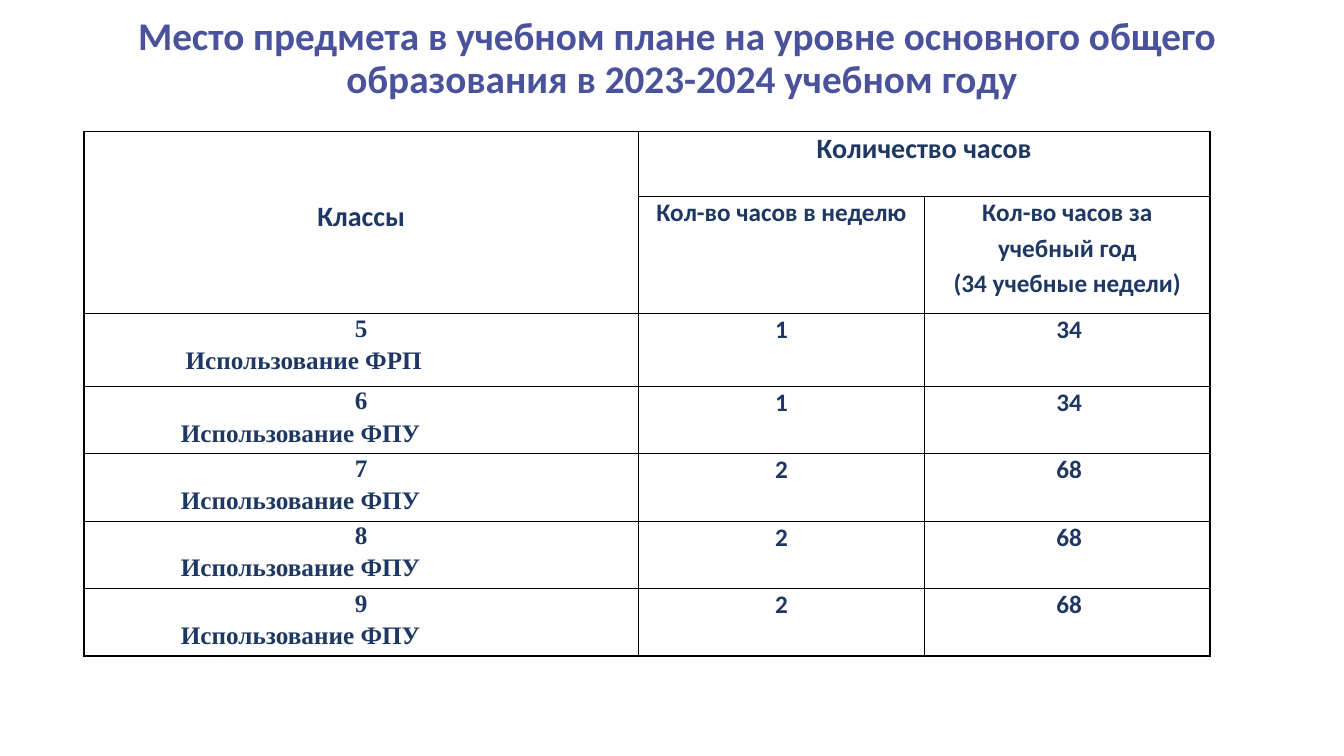
import pptx
import pptx.dml.color
import pptx.enum.text
import pptx.oxml
import pptx.oxml.ns
import pptx.util

Pt = pptx.util.Pt
ALIGN = pptx.enum.text.PP_ALIGN
TITLE_COLOR, TABLE_COLOR = "49529B", "1F3863"
SERIF = "Times New Roman"
COLUMNS = [396, 204.5, 203.8]
ROWS = [46.8, 83.5, 51.8] + [48.2] * 4
CLASSES = [
    ("5", "Использование ФРП", "1", "34"),
    ("6", "Использование ФПУ ", "1", "34"),
    ("7", "Использование ФПУ ", "2", "68"),
    ("8", "Использование ФПУ ", "2", "68"),
    ("9", "Использование ФПУ ", "2", "68"),
]


def rgb(color):
    return pptx.dml.color.RGBColor.from_string(color)


def set_all(obj, **values):
    for name, value in values.items():
        setattr(obj, name, value)


def write(p, text, size=18, font="Calibri", color=TABLE_COLOR,
          align=ALIGN.CENTER, before=0.7, **indents):
    """Fill a paragraph; indents are pPr attributes in points."""
    set_all(p, alignment=align, space_before=Pt(before))
    for name, value in indents.items():
        p._p.get_or_add_pPr().set(name, str(Pt(value)))
    r = p.add_run()
    r.text = text
    set_all(r.font, name=font, size=Pt(size), bold=True)
    r.font.color.rgb = rgb(color)


def add_title(s, text):
    title = s.shapes.title
    set_all(title, left=Pt(97.9), top=Pt(7.2), width=Pt(774), height=Pt(66.2))
    tf = title.text_frame
    set_all(tf, margin_left=0, margin_top=Pt(4.3), margin_right=0,
            margin_bottom=0, word_wrap=True,
            auto_size=pptx.enum.text.MSO_AUTO_SIZE.SHAPE_TO_FIT_TEXT,
            vertical_anchor=pptx.enum.text.MSO_ANCHOR.TOP)
    p = tf.paragraphs[0]
    write(p, text, size=28, color=TITLE_COLOR, align=ALIGN.LEFT, before=4.5,
          marL=149.5, indent=-148.8)
    p.line_spacing = Pt(30.5)


def style_cell(cell):
    """White fill, thin black borders and tight margins."""
    set_all(cell, margin_left=0, margin_right=0, margin_top=Pt(0.7),
            margin_bottom=0)
    tcPr = cell._tc.get_or_add_tcPr()
    for side in ("lnL", "lnR", "lnT", "lnB"):
        tcPr.append(pptx.oxml.parse_xml(
            f'<a:{side} {pptx.oxml.ns.nsdecls("a")} w="{Pt(1)}"><a:solidFill>'
            f'<a:srgbClr val="000000"/></a:solidFill></a:{side}>'))
    cell.fill.solid()
    cell.fill.fore_color.rgb = rgb("FFFFFF")


def add_grid(s):
    table = s.shapes.add_table(len(ROWS), len(COLUMNS), Pt(60), Pt(93.8),
                               Pt(sum(COLUMNS)), Pt(sum(ROWS))).table
    set_all(table, first_row=False, horz_banding=False)
    for column, width in zip(table.columns, COLUMNS):
        column.width = Pt(width)
    for row, height in zip(table.rows, ROWS):
        row.height = Pt(height)
    for cell in table.iter_cells():
        style_cell(cell)
    table.cell(0, 0).merge(table.cell(1, 0))
    table.cell(0, 1).merge(table.cell(0, 2))
    return table


def fill_header(table):
    classes = table.cell(0, 0)
    classes.margin_top = Pt(49)
    write(classes.text_frame.paragraphs[0], "Классы", size=20, before=0)
    write(table.cell(0, 1).text_frame.paragraphs[0], "Количество часов", size=20)
    write(table.cell(1, 1).text_frame.paragraphs[0], "Кол-во часов в неделю")
    tf = table.cell(1, 2).text_frame
    write(tf.paragraphs[0], "Кол-во часов за")
    for line in ("учебный год", "(34 учебные недели)"):
        write(tf.add_paragraph(), line, before=3.2)


def fill_class(table, row, number, programme, weekly, yearly):
    tf = table.cell(row, 0).text_frame
    write(tf.paragraphs[0], number, font=SERIF)
    write(tf.add_paragraph(), programme, font=SERIF, before=3.2, marR=82)
    write(table.cell(row, 1).text_frame.paragraphs[0], weekly)
    write(table.cell(row, 2).text_frame.paragraphs[0], yearly,
          align=ALIGN.RIGHT, marR=91.5)


def main():
    prs = pptx.Presentation()
    set_all(prs, slide_width=Pt(960), slide_height=Pt(540))
    s = prs.slides.add_slide(prs.slide_layouts.get_by_name("Title Only"))
    add_title(s, "Место предмета в учебном плане на уровне основного общего "
                 "образования в 2023-2024 учебном году")
    table = add_grid(s)
    fill_header(table)
    for row, values in enumerate(CLASSES, start=2):
        fill_class(table, row, *values)
    prs.save("out.pptx")


if __name__ == "__main__":
    main()
